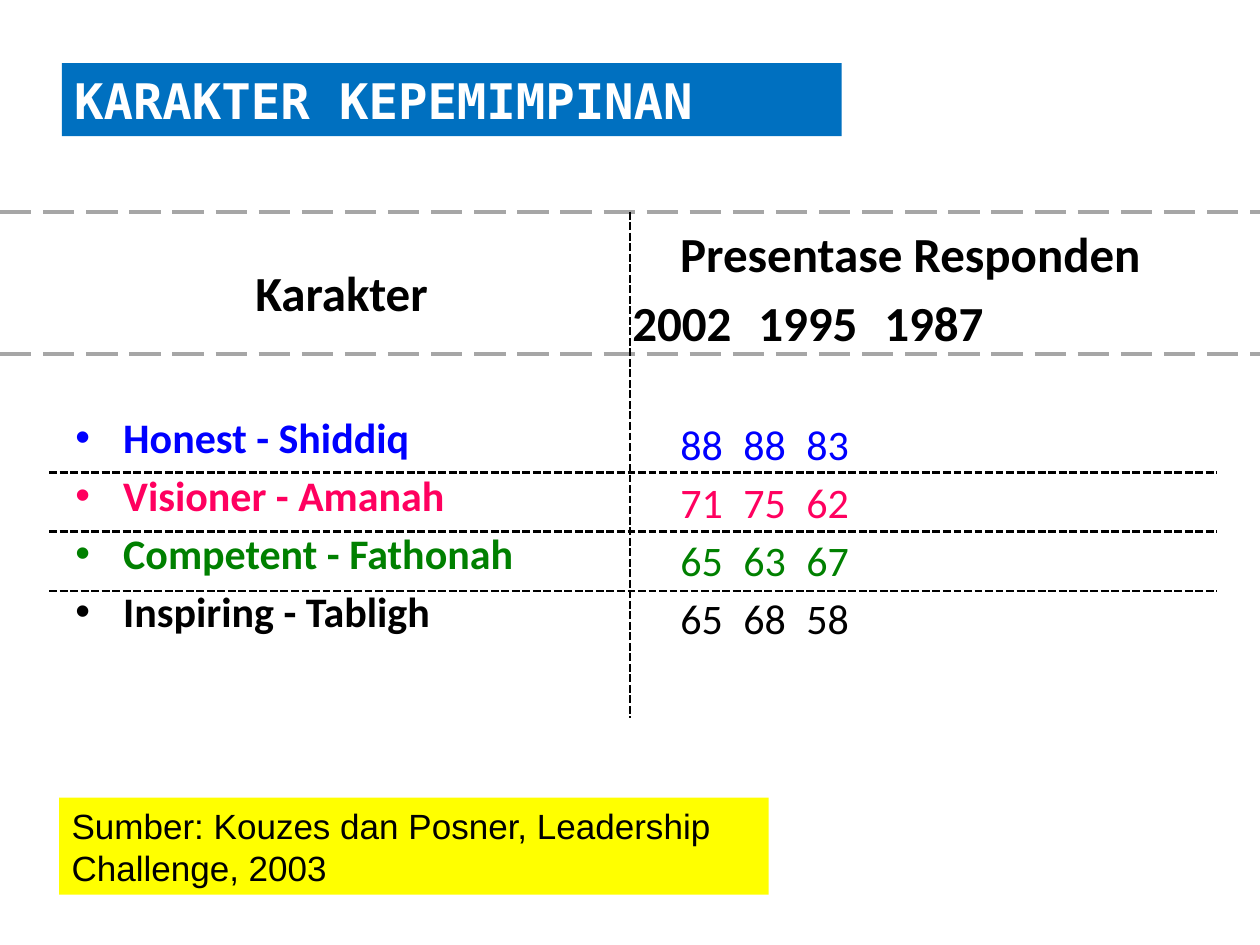
from collections import namedtuple
from dataclasses import dataclass

from lxml.etree import SubElement
from pptx import Presentation
from pptx.dml.color import RGBColor
from pptx.enum.dml import MSO_LINE as DASH
from pptx.enum.shapes import MSO_CONNECTOR as CONN, MSO_SHAPE as SHAPE
from pptx.enum.text import MSO_ANCHOR as ANCHOR, PP_ALIGN as ALIGN
from pptx.oxml.ns import qn
from pptx.util import Inches, Pt

Box = namedtuple("Box", "x y w h")


@dataclass(frozen=True)
class Theme:
    body: str = "Calibri"
    mono: str = "DejaVu Sans Mono"
    sans: str = "Arial"
    heading: int = 28
    row: int = 24
    note: int = 20
    black: str = "000000"
    white: str = "FFFFFF"
    grey: str = "A6A6A6"
    banner: str = "0070C0"
    source: str = "FFFF00"


T = Theme()
YEARS = ("2002", "1995", "1987")
ROWS = (
    ("Honest - Shiddiq", (88, 88, 83), "0000FF"),
    ("Visioner - Amanah", (71, 75, 62), "FF005F"),
    ("Competent - Fathonah", (65, 63, 67), "008000"),
    ("Inspiring - Tabligh", (65, 68, 58), T.black),
)
ROW_PITCH = 0.47


def add_text(tf, text, *, first=False, size=T.row, font=T.body, color=T.black,
             bold=False, align=ALIGN.LEFT, before=0, indent=0, bullet=False, tabs=()):
    p = tf.paragraphs[0] if first else tf.add_paragraph()
    p.alignment = align
    p.space_before = Pt(before)
    pPr = p._p.get_or_add_pPr()
    pPr.set("marL", str(Inches(indent)))
    pPr.set("indent", str(Inches(-indent if bullet else 0)))
    if bullet:
        SubElement(pPr, qn("a:buFont")).set("typeface", T.sans)
        SubElement(pPr, qn("a:buChar")).set("char", "•")
    if tabs:
        tab_list = SubElement(pPr, qn("a:tabLst"))
        for pos in tabs:
            tab = SubElement(tab_list, qn("a:tab"))
            tab.set("pos", str(Inches(pos)))
            tab.set("algn", "l")
    r = p.add_run()
    r.text = text
    r.font.size, r.font.name, r.font.bold = Pt(size), font, bold
    r.font.color.rgb = RGBColor.from_string(color)


def set_frame(sp, anchor, left=0.1, top=0.05, bottom=0.05):
    tf = sp.text_frame
    tf.word_wrap = True
    tf.vertical_anchor = anchor
    tf.margin_left, tf.margin_top, tf.margin_bottom = map(Inches, (left, top, bottom))
    return tf


def add_box(s, box, anchor=ANCHOR.TOP, **margins):
    return set_frame(s.shapes.add_textbox(*map(Inches, box)), anchor, **margins)


def add_panel(s, box, fill, text, **fmt):
    sp = s.shapes.add_shape(SHAPE.RECTANGLE, *map(Inches, box))
    sp.shadow.inherit = False
    sp.fill.solid()
    sp.fill.fore_color.rgb = RGBColor.from_string(fill)
    sp.line.fill.background()
    add_text(set_frame(sp, ANCHOR.MIDDLE), text, first=True, **fmt)


def add_rule(s, x1, y1, x2, y2, color=T.black, width=1.5, dash=DASH.SQUARE_DOT):
    line = s.shapes.add_connector(CONN.STRAIGHT, *map(Inches, (x1, y1, x2, y2)))
    line.line.color.rgb = RGBColor.from_string(color)
    line.line.width = Pt(width)
    line.line.dash_style = dash
    SubElement(line._element.spPr, qn("a:effectLst"))


def add_header(s, box):
    mid = box.x + box.w / 2
    tf = add_box(s, Box(box.x + 0.5, box.y + 0.19, 4.42, 0.7), ANCHOR.BOTTOM, bottom=0.02)
    add_text(tf, "Karakter", first=True, size=T.heading, bold=True, align=ALIGN.CENTER)
    tf = add_box(s, Box(mid - 0.08, box.y, 5.55, box.h), ANCHOR.BOTTOM, bottom=0.02)
    add_text(tf, "Presentase Responden", first=True, size=T.heading, bold=True, indent=0.38)
    add_text(tf, "\t".join(YEARS), size=T.heading, bold=True, before=5.6, tabs=(1.59, 3.35))
    for y in (box.y, box.y + box.h):
        add_rule(s, box.x, y, box.x + box.w, y, T.grey, 2.25, DASH.LONG_DASH)


def add_rows(s, box):
    mid = box.x + box.w / 2
    labels = add_box(s, Box(box.x + 0.5, box.y, 5.36, 5), top=1)
    values = add_box(s, Box(mid + 0.08, box.y + 0.05, 4.92, 4.32), left=0.32, top=1)
    for i, (label, shares, color) in enumerate(ROWS):
        fmt = dict(first=i == 0, color=color, before=4.3 if i else 0)
        add_text(labels, label, bold=True, indent=0.38, bullet=True, **fmt)
        add_text(values, "\t".join(map(str, shares)), tabs=(1.78, 3.54), **fmt)
    for i in range(len(ROWS) - 1):
        y = box.y + 1.48 + i * ROW_PITCH
        add_rule(s, box.x + 0.39, y, box.x + box.w - 0.34, y)


def main():
    prs = Presentation()
    prs.slide_width, prs.slide_height = Inches(10), Inches(7.5)
    s = prs.slides.add_slide(prs.slide_layouts[6])
    add_header(s, Box(0, 1.68, 10, 1.13))
    add_rows(s, Box(0, 2.27, 10, 5))
    add_rule(s, 5, 1.68, 5, 5.7)
    add_panel(s, Box(0.49, 0.5, 6.19, 0.58), T.banner, "KARAKTER KEPEMIMPINAN",
              size=T.heading, font=T.mono, color=T.white, bold=True)
    add_panel(s, Box(0.47, 6.33, 5.63, 0.77), T.source,
              "Sumber: Kouzes dan Posner, Leadership Challenge, 2003",
              size=T.note, font=T.sans)
    prs.save("out.pptx")


if __name__ == "__main__":
    main()
